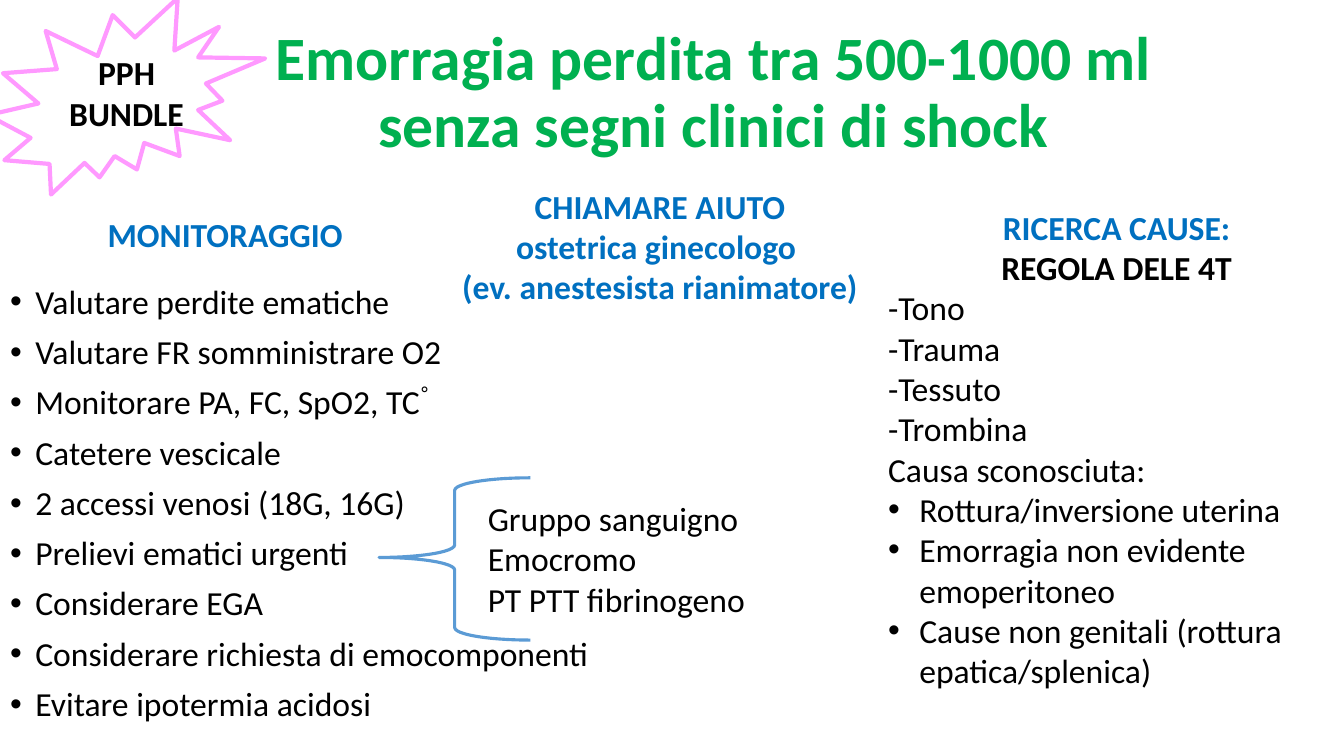
from dataclasses import dataclass
from typing import Optional

from lxml.etree import SubElement
from pptx import Presentation
from pptx.dml.color import RGBColor
from pptx.enum.shapes import MSO_SHAPE as Preset
from pptx.enum.text import MSO_ANCHOR as Anchor, MSO_AUTO_SIZE as AutoSize, PP_ALIGN as Align
from pptx.oxml.ns import qn
from pptx.util import Inches, Pt


@dataclass(frozen=True)
class Theme:
    font: str = "Calibri"
    title_size: int = 44
    text_size: int = 24
    title: str = "00B050"
    heading: str = "0070C0"
    text: str = "000000"
    brace: str = "5B9BD5"
    seal: str = "FF99FF"


THEME = Theme()


@dataclass(frozen=True)
class Box:
    left: float
    top: float
    width: float
    height: float

    def inches(self) -> tuple:
        return tuple(Inches(n) for n in (self.left, self.top, self.width, self.height))


@dataclass(frozen=True)
class Line:
    text: str
    color: str = THEME.text
    size: int = THEME.text_size
    bold: bool = False
    centered: bool = False
    indent: float = 0
    spacing: Optional[float] = None
    before: float = 0


@dataclass(frozen=True)
class Note:
    box: Box
    lines: list[Line]


@dataclass(frozen=True)
class Outline:
    preset: Preset
    box: Box
    color: str
    weight: float
    adjustments: tuple = ()


def heading(text: str, color: str = THEME.heading) -> Line:
    return Line(text, color, bold=True, centered=True)


TITLE_BOX = Box(1.33, 0.21, 11.5, 1.45)
TITLE = Line("Emorragia perdita tra 500-1000 ml\nsenza segni clinici di shock",
             THEME.title, THEME.title_size, bold=True, centered=True, spacing=0.9)

MONITORING_BOX = Box(0, 2.78, 13.33, 4.76)
MONITORING = [
    "Valutare perdite ematiche",
    "Valutare FR somministrare O2",
    "Monitorare PA, FC, SpO2, TC֯",
    "Catetere vescicale",
    "2 accessi venosi (18G, 16G)",
    "Prelievi ematici urgenti",
    "Considerare EGA",
    "Considerare richiesta di emocomponenti",
    "Evitare ipotermia acidosi",
]

OUTLINES = [
    Outline(Preset.LEFT_BRACE, Box(3.76, 4.74, 1.5, 1.61), THEME.brace, 2.25, (0.083, 0.491)),
    Outline(Preset.EXPLOSION2, Box(-0.12, -0.02, 2.75, 1.95), THEME.seal, 3),
]

CALL_FOR_HELP = ["CHIAMARE AIUTO", "ostetrica ginecologo ", "(ev. anestesista rianimatore)"]
BLOOD_TESTS = ["Gruppo sanguigno", "Emocromo", "PT PTT fibrinogeno"]
FOUR_T = ["-Tono", "-Trauma", "-Tessuto", "-Trombina", "Causa sconosciuta:"]
UNKNOWN_CAUSES = [
    "Rottura/inversione uterina",
    "Emorragia non evidente emoperitoneo",
    "Cause non genitali (rottura epatica/splenica)",
]

NOTES = [
    Note(Box(4.09, 1.79, 4.91, 1.31), [heading(text) for text in CALL_FOR_HELP]),
    Note(Box(4.74, 4.89, 3.07, 1.31), [Line(text) for text in BLOOD_TESTS]),
    Note(Box(8.71, 2, 4.73, 4.95),
         [heading("RICERCA CAUSE:"), heading("REGOLA DELE 4T", THEME.text)]
         + [Line(text) for text in FOUR_T]
         + [Line(text, indent=0.31) for text in UNKNOWN_CAUSES]),
    Note(Box(0.27, 2.07, 4, 0.5), [heading("MONITORAGGIO ")]),
    Note(Box(0.5, 0.47, 1.51, 0.91),
         [heading(text, THEME.text) for text in ("PPH", "BUNDLE")]),
]


def set_bullet(paragraph, indent: float) -> None:
    properties = paragraph._p.get_or_add_pPr()
    properties.set("marL", str(Inches(indent)))
    properties.set("indent", str(-Inches(indent)))
    SubElement(properties, qn("a:buFont"), typeface="Arial")
    SubElement(properties, qn("a:buChar"), char="•")


def write_lines(frame, lines: list[Line]) -> None:
    for index, line in enumerate(lines):
        paragraph = frame.add_paragraph() if index else frame.paragraphs[0]
        if line.indent:
            set_bullet(paragraph, line.indent)
        paragraph.alignment = Align.CENTER if line.centered else Align.LEFT
        paragraph.space_before = Pt(line.before if index else 0)
        if line.spacing:
            paragraph.line_spacing = line.spacing
        for row, text in enumerate(line.text.split("\n")):
            if row:
                paragraph.add_line_break()
            run = paragraph.add_run()
            run.text = text
            run.font.name = THEME.font
            run.font.size = Pt(line.size)
            run.font.bold = line.bold
            run.font.color.rgb = RGBColor.from_string(line.color)


def fill_placeholder(placeholder, box: Box, lines: list[Line], anchor: Anchor) -> None:
    placeholder.left, placeholder.top, placeholder.width, placeholder.height = box.inches()
    frame = placeholder.text_frame
    frame.auto_size = AutoSize.NONE
    frame.vertical_anchor = anchor
    write_lines(frame, lines)


def add_note(slide, note: Note) -> None:
    frame = slide.shapes.add_textbox(*note.box.inches()).text_frame
    frame.word_wrap = True
    frame.auto_size = AutoSize.SHAPE_TO_FIT_TEXT
    write_lines(frame, note.lines)


def add_outline(slide, outline: Outline) -> None:
    shape = slide.shapes.add_shape(outline.preset, *outline.box.inches())
    shape.shadow.inherit = False
    shape.fill.background()
    shape.line.color.rgb = RGBColor.from_string(outline.color)
    shape.line.width = Pt(outline.weight)
    for index, value in enumerate(outline.adjustments):
        shape.adjustments[index] = value


def main() -> None:
    presentation = Presentation()
    presentation.slide_width = Inches(13.33)
    presentation.slide_height = Inches(7.5)
    slide = presentation.slides.add_slide(presentation.slide_layouts[1])
    fill_placeholder(slide.shapes.title, TITLE_BOX, [TITLE], Anchor.MIDDLE)
    monitoring = [Line(text, indent=0.25, spacing=0.9, before=10) for text in MONITORING]
    fill_placeholder(slide.placeholders[1], MONITORING_BOX, monitoring, Anchor.TOP)
    for outline in OUTLINES:
        add_outline(slide, outline)
    for note in NOTES:
        add_note(slide, note)
    presentation.save("out.pptx")


if __name__ == "__main__":
    main()
